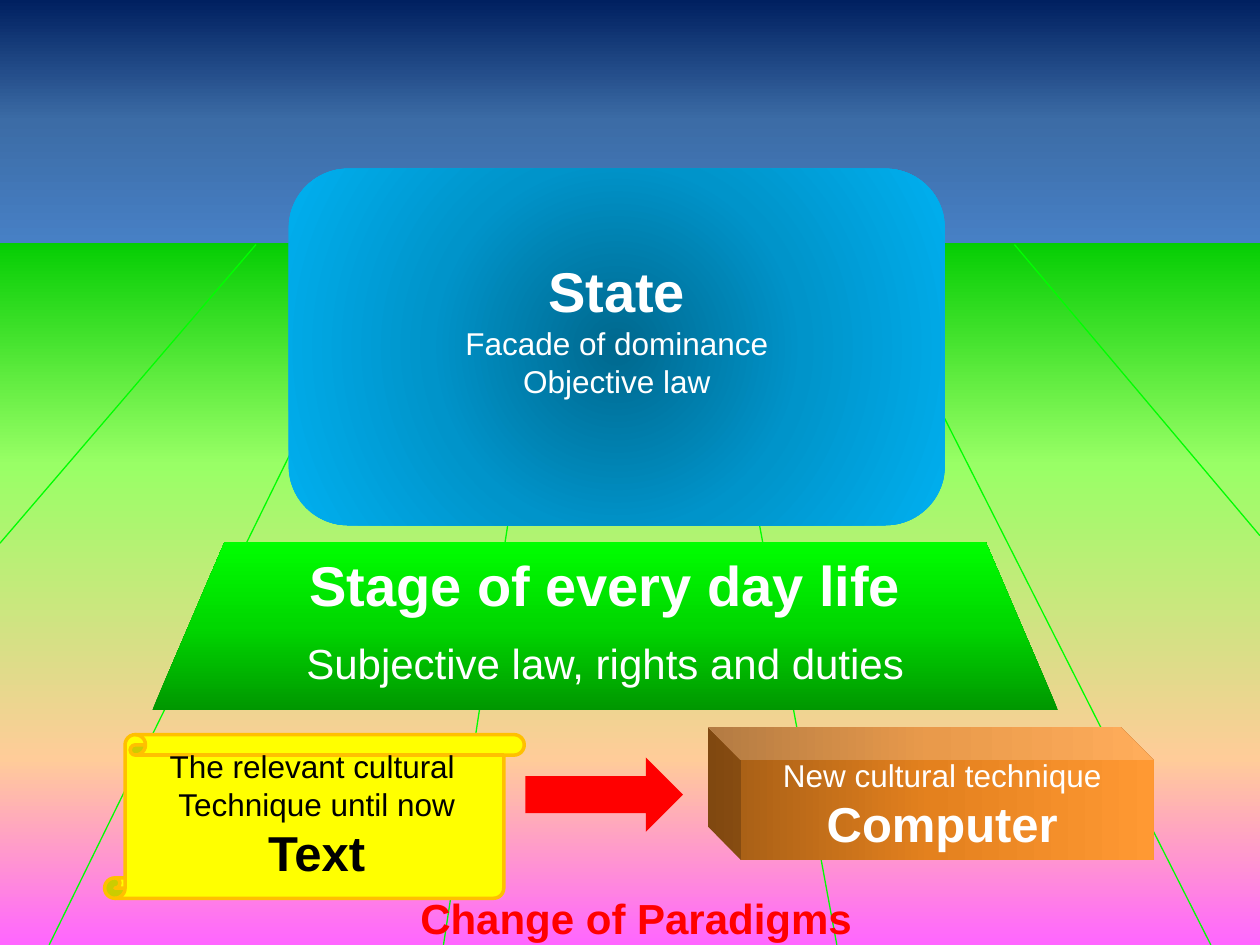
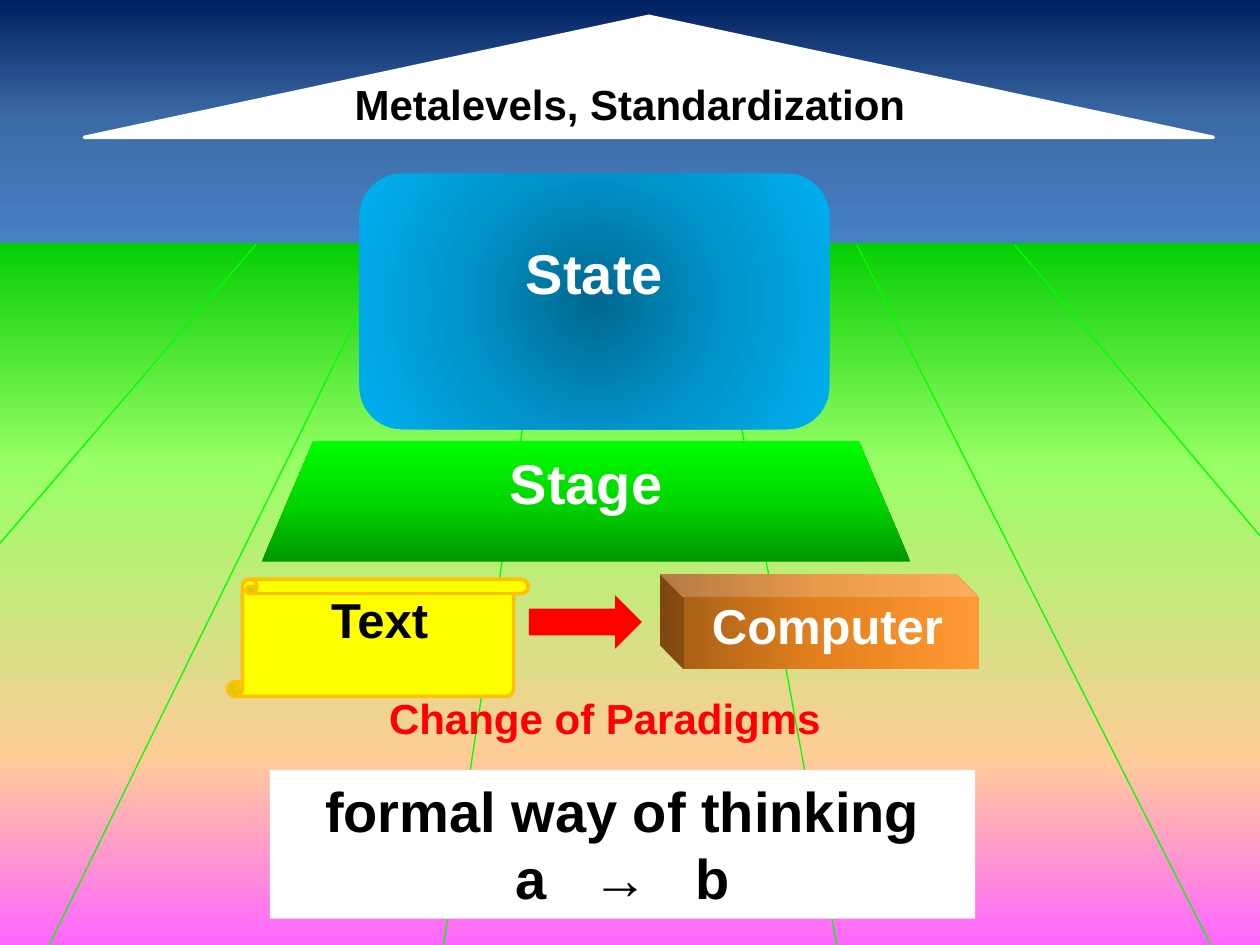
from dataclasses import dataclass

from lxml.etree import SubElement
from pptx import Presentation
from pptx.dml.color import RGBColor
from pptx.enum.shapes import MSO_CONNECTOR as Connector, MSO_SHAPE as Preset
from pptx.enum.text import MSO_ANCHOR as Anchor, MSO_AUTO_SIZE as AutoSize, PP_ALIGN as Align
from pptx.oxml.ns import qn
from pptx.shapes.autoshape import Shape
from pptx.slide import Slide
from pptx.util import Cm, Pt

FONT = "Arial"
WHITE, BLACK, RED, YELLOW, GOLD, LIME = "FFFFFF", "000000", "FF0000", "FFFF00", "FFC000", "00FF00"
PAGE_WIDTH, PAGE_HEIGHT = 25.4, 19.05
HORIZON = 4.93


@dataclass(frozen=True)
class Gradient:
    colours: tuple[str, ...]
    angle: int | None = 90


@dataclass(frozen=True)
class Box:
    left: float
    top: float
    width: float
    height: float = 0


@dataclass(frozen=True)
class Block:
    preset: Preset
    box: Box
    fill: str | Gradient
    outline: str | None = None
    adjustment: float | None = None
    flipped: bool = False


@dataclass(frozen=True)
class Line:
    text: str
    size: int
    bold: bool = False
    gap: float = 0
    spacing: float = 0


@dataclass(frozen=True)
class Label:
    box: Box
    colour: str
    lines: tuple[Line, ...]


@dataclass(frozen=True)
class View:
    scale: float = 1
    left: float = 0
    top: float = 0

    def place(self, box: Box) -> Box:
        return Box(self.left + box.left * self.scale, self.top + box.top * self.scale,
                   box.width * self.scale, box.height * self.scale)


GROUND = (
    Block(Preset.RECTANGLE, Box(0, 9.37, PAGE_WIDTH, 5.97), Gradient(("99FF66", "FFCC99"))),
    Block(Preset.RECTANGLE, Box(0, 4.75, PAGE_WIDTH, 4.62), Gradient(("00CC00", "99FF66"))),
    Block(Preset.RECTANGLE, Box(0, 15.29, PAGE_WIDTH, 3.76), Gradient(("FFCC99", "FF66FF"))),
)
SKY = Block(Preset.RECTANGLE, Box(0, 0, PAGE_WIDTH, 4.9), Gradient(("002060", "3C6CA6", "4780C5")))
FIELD_LINES = (
    (14.27, 16.87, PAGE_HEIGHT), (20.45, PAGE_WIDTH, 10.8), (17.27, 24.41, PAGE_HEIGHT),
    (11.1, 8.94, PAGE_HEIGHT), (7.92, 0.99, PAGE_HEIGHT), (5.16, 0, 10.95),
)

STAGE = Block(Preset.TRAPEZOID, Box(3.07, 10.92, 18.26, 3.4),
              Gradient(("009700", "00D700", "00FF00"), 270), adjustment=0.43)
STATE = Block(Preset.ROUNDED_RECTANGLE, Box(5.82, 3.4, 13.23, 7.19),
              Gradient(("00688E", "0094CA", "00B0F0"), None))
SCROLL = Block(Preset.VERTICAL_SCROLL, Box(2.11, 14.81, 8.46, 3.3), YELLOW, GOLD)
ARROW = Block(Preset.RIGHT_ARROW, Box(10.59, 15.27, 3.18, 1.5), RED)
CUBE = Block(Preset.CUBE, Box(14.27, 14.66, 8.99, 2.67),
             Gradient(("A05B15", "E4811E", "FF9933"), 180), flipped=True)

STAGE_TEXT = Box(3.07, 10.97, 18.26)
STATE_TEXT = Box(5.82, 5.05, 13.23)
SCROLL_TEXT = Box(1.7, 14.94, 9.37)
CUBE_TEXT = Box(14.5, 15.11, 8.99)


def colour_of(value: str) -> RGBColor:
    return RGBColor.from_string(value)


def paint_gradient(shape: Shape, gradient: Gradient) -> None:
    shape.fill.gradient()
    element = shape.fill._fill._gradFill
    for child in list(element):
        element.remove(child)
    element.set("rotWithShape", "1")
    stops = SubElement(element, qn("a:gsLst"))
    step = 100000 // (len(gradient.colours) - 1)
    for index, colour in enumerate(gradient.colours):
        stop = SubElement(stops, qn("a:gs"), pos=str(index * step))
        SubElement(stop, qn("a:srgbClr"), val=colour)
    if gradient.angle is None:
        circle = SubElement(element, qn("a:path"), {"path": "circle"})
        SubElement(circle, qn("a:fillToRect"), l="50000", t="50000", r="50000", b="50000")
    else:
        SubElement(element, qn("a:lin"), ang=str(gradient.angle * 60000), scaled="1")


def draw_block(page: Slide, block: Block, view: View = View()) -> Shape:
    box = view.place(block.box)
    shape = page.shapes.add_shape(block.preset, Cm(box.left), Cm(box.top), Cm(box.width), Cm(box.height))
    shape.shadow.inherit = False
    if block.adjustment is not None:
        shape.adjustments[0] = block.adjustment
    if isinstance(block.fill, Gradient):
        paint_gradient(shape, block.fill)
    else:
        shape.fill.solid()
        shape.fill.fore_color.rgb = colour_of(block.fill)
    if block.outline:
        shape.line.color.rgb = colour_of(block.outline)
        shape.line.width = Pt(2)
    else:
        shape.line.fill.background()
    if block.flipped:
        shape._element.spPr.find(qn("a:xfrm")).set("flipH", "1")
    return shape


def write_line(shape: Shape, text: str, *, first: bool, size: int, bold: bool,
               colour: str, gap: float, spacing: float) -> None:
    frame = shape.text_frame
    para = frame.paragraphs[0] if first else frame.add_paragraph()
    para.alignment = Align.CENTER
    para.space_before = Pt(gap)
    span = para.add_run()
    span.text = text
    span.font.name = FONT
    span.font.size = Pt(size)
    span.font.bold = bold
    span.font.color.rgb = colour_of(colour)
    if spacing:
        span.font._element.set("spc", str(round(spacing * 100)))


def write_lines(shape: Shape, lines: tuple[Line, ...], colour: str) -> None:
    frame = shape.text_frame
    frame.word_wrap = True
    frame.auto_size = AutoSize.SHAPE_TO_FIT_TEXT
    frame.vertical_anchor = Anchor.TOP
    for index, line in enumerate(lines):
        write_line(shape, line.text, first=index == 0, size=line.size, bold=line.bold,
                   colour=colour, gap=line.gap, spacing=line.spacing)


def draw_label(page: Slide, label: Label, view: View = View()) -> None:
    box = view.place(label.box)
    height = Pt(sum(line.size * 1.2 + line.gap for line in label.lines)) + Cm(0.25)
    shape = page.shapes.add_textbox(Cm(box.left), Cm(box.top), Cm(box.width), height)
    write_lines(shape, label.lines, label.colour)


def draw_landscape(page: Slide) -> None:
    for band in GROUND:
        draw_block(page, band)
    for start, end, bottom in FIELD_LINES:
        line = page.shapes.add_connector(Connector.STRAIGHT, Cm(start), Cm(HORIZON), Cm(end), Cm(bottom))
        line.line.color.rgb = colour_of(LIME)
        line.line.width = Pt(0.75)
        SubElement(line._element.spPr, qn("a:effectLst"))
    draw_block(page, SKY)


def draw_scene(page: Slide, view: View, caption: Box, *, stage: tuple[Line, ...],
               state: tuple[Line, ...], scroll: tuple[Line, ...], cube: tuple[Line, ...]) -> None:
    for block, label in (
        (STAGE, Label(STAGE_TEXT, WHITE, stage)),
        (STATE, Label(STATE_TEXT, WHITE, state)),
        (SCROLL, Label(SCROLL_TEXT, BLACK, scroll)),
        (ARROW, None),
        (CUBE, Label(CUBE_TEXT, WHITE, cube)),
    ):
        draw_block(page, block, view)
        if label:
            draw_label(page, label, view)
    draw_label(page, Label(caption, RED, (Line("Change of Paradigms", 24, True),)))


def main() -> None:
    deck = Presentation()
    deck.slide_width, deck.slide_height = Cm(PAGE_WIDTH), Cm(PAGE_HEIGHT)
    blank = deck.slide_layouts[6]
    state, text, computer = Line("State", 32, True), Line("Text", 28, True), Line("Computer", 28, True)

    page = deck.slides.add_slide(blank)
    draw_landscape(page)
    draw_scene(
        page, View(), Box(6.6, 17.86, 12.45),
        stage=(Line("Stage of every day life", 32, True),
               Line("Subjective law, rights and duties", 24, gap=11.5)),
        state=(state, Line("Facade of dominance", 18), Line("Objective law", 18)),
        scroll=(Line("The relevant cultural ", 18), Line("Technique until now", 18), text),
        cube=(Line("New cultural technique", 18), computer),
    )

    page = deck.slides.add_slide(blank)
    draw_landscape(page)
    draw_scene(
        page, View(0.716, 3.08, 1.07), Box(4.09, 13.84, 16.21),
        stage=(Line("Stage", 32, True),), state=(state,), scroll=(text,), cube=(computer,),
    )
    thinking = draw_block(page, Block(Preset.RECTANGLE, Box(5.44, 15.52, 14.22, 3), WHITE))
    write_lines(thinking, (Line("formal way of thinking", 32, True),
                           Line("a → b", 32, True, spacing=8.9)), BLACK)
    draw_block(page, Block(Preset.ISOSCELES_TRIANGLE, Box(1.7, 0.33, 22.76, 2.44), WHITE, WHITE))
    draw_label(page, Label(Box(0, 1.45, PAGE_WIDTH), BLACK,
                           (Line("Metalevels, Standardization", 24, True),)))
    deck.save("out.pptx")


if __name__ == "__main__":
    main()
